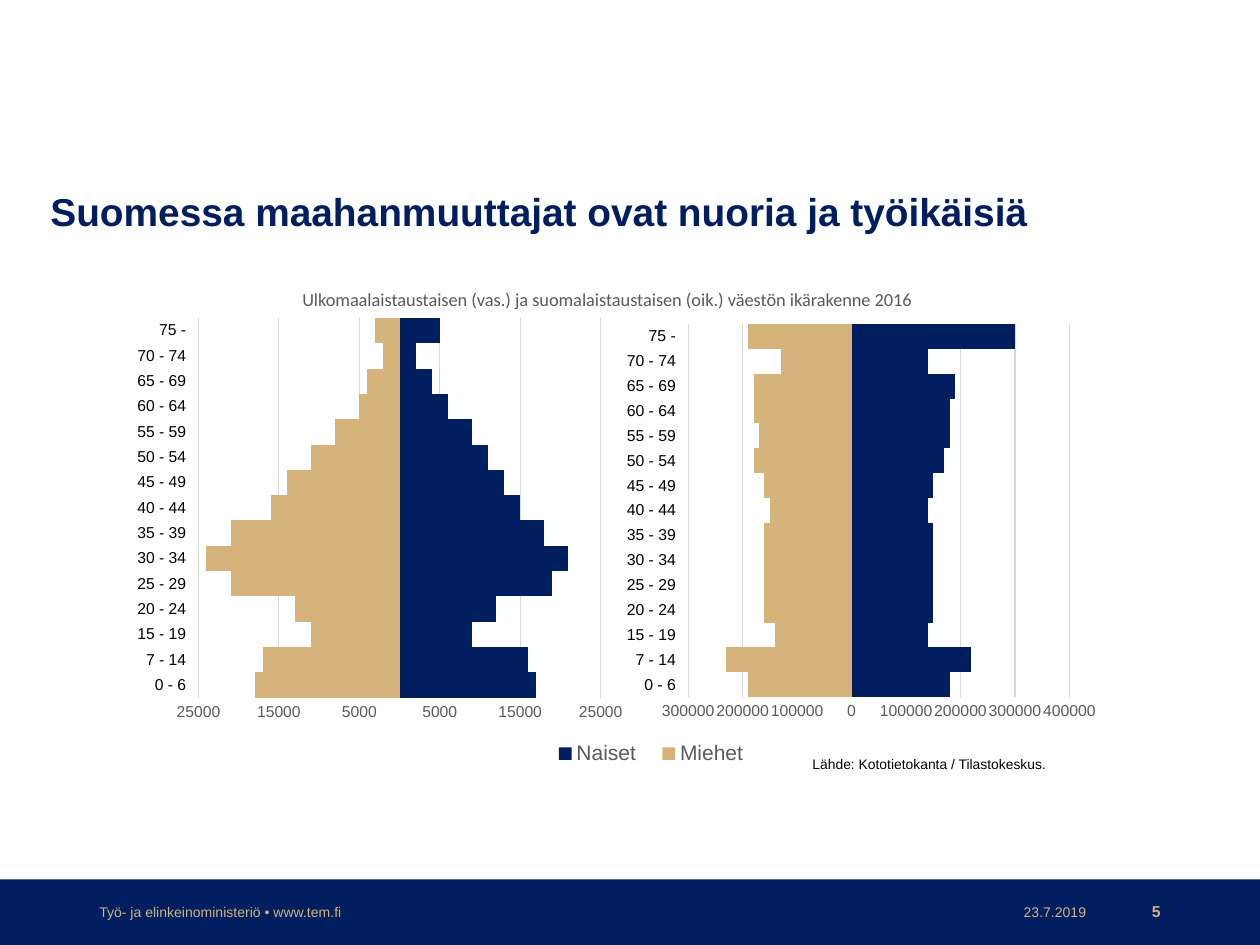
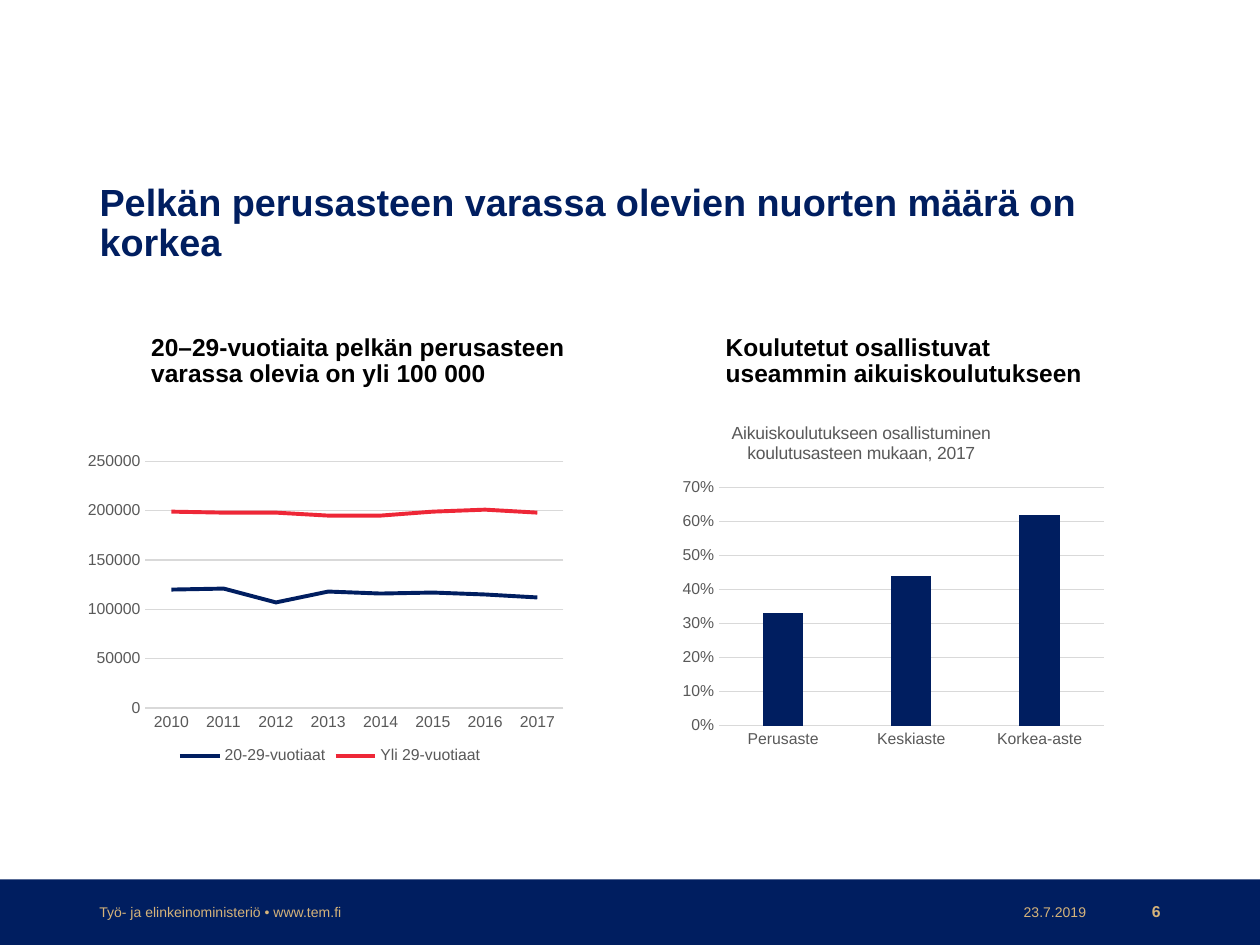
from lxml import etree
from pptx import Presentation
from pptx.chart.data import CategoryChartData as Data
from pptx.dml.color import RGBColor as RGB
from pptx.enum.chart import XL_CHART_TYPE as Kind, XL_LEGEND_POSITION as Side
from pptx.enum.chart import XL_MARKER_STYLE as Mark, XL_TICK_MARK as Tick
from pptx.enum.chart import XL_TICK_LABEL_POSITION as Spot
from pptx.enum.shapes import MSO_SHAPE as Form
from pptx.enum.text import MSO_ANCHOR as Anchor, MSO_AUTO_SIZE as Fit, PP_ALIGN as Align
from pptx.oxml.ns import qn
from pptx.util import Inches, Pt

HUES = {"navy": "001E60", "sand": "D5B37A", "red": "EE2737",
        "black": "000000", "gray": "595959", "grid": "D9D9D9"}
AGES = ["0 - 6", "7 - 14", "15 - 19"] + [f"{a} - {a + 4}" for a in range(20, 75, 5)] + ["75 -"]
YEARS = [str(y) for y in range(2010, 2018)]


def hue(name):
    return RGB.from_string(HUES[name])


def style(font, size, color, bold=False, face="Arial"):
    font.size = Pt(size)
    font.name = face
    font.bold = bold
    font.color.rgb = hue(color)


def put(shape, at):
    shape.left, shape.top, shape.width, shape.height = map(Inches, at)


def write(shape, text, size, color, bold=False, face="Arial",
          align=Align.LEFT, anchor=Anchor.TOP, lead=1.0):
    frame = shape.text_frame
    frame.text = text
    frame.word_wrap = True
    frame.auto_size = Fit.NONE
    frame.vertical_anchor = anchor
    for para in frame.paragraphs:
        para.alignment = align
        para.line_spacing = lead
        para.space_before = Pt(0)
        for run in para.runs:
            style(run.font, size, color, bold, face)


def label(slide, at, text, size, color, **look):
    box = slide.shapes.add_textbox(*map(Inches, at))
    write(box, text, size, color, **look)


def title(slide, at, text, size):
    head = slide.shapes.title
    put(head, at)
    write(head, text, size, "navy", bold=True, anchor=Anchor.MIDDLE, lead=0.9)
    return head


def foot(slide, page):
    mid = {"anchor": Anchor.MIDDLE}
    label(slide, (0.69, 7.12, 3.37, 0.23), "Työ- ja elinkeinoministeriö • www.tem.fi",
          8, "sand", **mid)
    label(slide, (7.95, 7.12, 0.77, 0.23), "23.7.2019", 8, "sand", align=Align.RIGHT, **mid)
    label(slide, (8.72, 7.12, 0.59, 0.23), page, 9, "sand", bold=True, align=Align.RIGHT, **mid)


def band(prs, slide):
    bar = slide.shapes.add_shape(Form.RECTANGLE, 0, Inches(6.98), prs.slide_width, Inches(0.52))
    bar.shadow.inherit = False
    bar.fill.solid()
    bar.fill.fore_color.rgb = hue("navy")
    bar.line.fill.background()
    prs.slide_master.element.cSld.spTree.insert(2, bar.element)


def place(chart, part, at, index, inner=False):
    node = chart.element.xpath(f"c:chart/c:{part}")[0]
    for old in node.findall(qn("c:layout")):
        node.remove(old)
    layout = etree.Element(qn("c:layout"))
    manual = etree.SubElement(layout, qn("c:manualLayout"))
    pairs = [("layoutTarget", "inner")] if inner else []
    pairs += [("xMode", "edge"), ("yMode", "edge")] + list(zip("xywh", at))
    for tag, val in pairs:
        etree.SubElement(manual, qn(f"c:{tag}")).set("val", str(val))
    node.insert(index, layout)


def axes(chart, span, form, color):
    cat, val = chart.category_axis, chart.value_axis
    for axis, tint in ((cat, color), (val, "gray")):
        axis.major_tick_mark = axis.minor_tick_mark = Tick.NONE
        style(axis.tick_labels.font, 9, tint)
    cat.has_major_gridlines = False
    val.has_major_gridlines = True
    for line in (cat.format.line, val.major_gridlines.format.line):
        line.color.rgb = hue("grid")
        line.width = Pt(0.75)
    val.format.line.fill.background()
    val.minimum_scale, val.maximum_scale, val.major_unit = span
    val.tick_labels.number_format = form
    val.tick_labels.number_format_is_linked = False


def graph(slide, kind, at, cats, rows, plot, span, form="General", color="gray"):
    data = Data()
    data.categories = cats
    for name, vals, tint in rows:
        data.add_series(name, vals)
    chart = slide.shapes.add_chart(kind, *map(Inches, at), data).chart
    style(chart.font, 10, "black")
    chart.has_title = chart.has_legend = False
    chart.plots[0].vary_by_categories = False
    axes(chart, span, form, color)
    place(chart, "plotArea", plot, 0, True)
    for ser, (name, vals, tint) in zip(chart.plots[0].series, rows):
        if kind == Kind.LINE:
            ser.smooth = False
            ser.marker.style = Mark.NONE
            ser.format.line.color.rgb = hue(tint)
            ser.format.line.width = Pt(2.25)
        else:
            ser.invert_if_negative = False
            ser.format.fill.solid()
            ser.format.fill.fore_color.rgb = hue(tint)
    return chart


def legend(chart, side, size):
    chart.has_legend = True
    chart.legend.position = side
    chart.legend.include_in_layout = False
    style(chart.legend.font, size, "gray")


def tower(slide, at, names, men, women, plot, span):
    rows = [(name, [v * 1000 for v in vals], tint) for name, vals, tint in
            zip(names, ([-v for v in men], women), ("sand", "navy"))]
    chart = graph(slide, Kind.BAR_CLUSTERED, at, AGES, rows, plot, span, "0;0", "black")
    chart.plots[0].gap_width = 0
    chart.plots[0].overlap = 100
    chart.category_axis.tick_label_position = Spot.LOW
    return chart


def ages(prs):
    slide = prs.slides.add_slide(prs.slide_layouts[5])
    band(prs, slide)
    chart = tower(slide, (1.92, 2.45, 7.38, 4.06), ("Miehet", "Naiset"),
                  [190, 230, 140, 160, 160, 160, 160, 150, 160, 180, 170, 180, 180, 130, 190],
                  [180, 220, 140, 150, 150, 150, 150, 140, 150, 170, 180, 180, 190, 140, 300],
                  (0.48, 0.03, 0.41, 0.73), (-300000, 400000, 100000))
    legend(chart, Side.RIGHT, 12)
    place(chart, "legend", (0.32, 0.83, 0.24, 0.08), 1)
    tower(slide, (1.09, 2.49, 3.87, 3.35), ("Series 1", "Series 2"),
          [18, 17, 11, 13, 21, 24, 21, 16, 14, 11, 8, 5, 4, 2, 3],
          [17, 16, 9, 12, 19, 21, 18, 15, 13, 11, 9, 6, 4, 2, 5],
          (0.12, 0.01, 0.83, 0.9), (-25000, 25000, 10000))
    foot(slide, "5")
    label(slide, (6.35, 5.95, 2.13, 0.23), "Lähde: Kototietokanta / Tilastokeskus.", 7.9, "black")
    head = title(slide, (0.33, 1.4, 8, 0.6),
                 "Suomessa maahanmuuttajat ovat nuoria ja työikäisiä", 22.2)
    head.text_frame.margin_left = head.text_frame.margin_right = Inches(0.07)
    label(slide, (1.91, 2.24, 5.82, 0.28),
          "Ulkomaalaistaustaisen (vas.) ja suomalaistaustaisen (oik.) väestön ikärakenne 2016",
          10.5, "gray", face="Calibri", align=Align.CENTER)


def skills(prs):
    slide = prs.slides.add_slide(prs.slide_layouts[4])
    title(slide, (0.69, 1.37, 7.98, 0.82),
          "Pelkän perusasteen varassa olevien nuorten määrä on korkea", 21.6)
    foot(slide, "6")
    heads = {1: ((1.1, 2.61, 3.79, 0.68),
                 "20–29-vuotiaita pelkän perusasteen\vvarassa olevia on yli 100 000"),
             3: ((5.66, 2.61, 3.35, 0.68),
                 "Koulutetut osallistuvat\vuseammin aikuiskoulutukseen")}
    for hold in list(slide.placeholders):
        idx = hold.placeholder_format.idx
        if idx in heads:
            at, text = heads[idx]
            put(hold, at)
            write(hold, text, 14, "black", bold=True, lead=0.9)
        elif idx:
            hold.element.getparent().remove(hold.element)

    young = [v * 1000 for v in (120, 121, 107, 118, 116, 117, 115, 112)]
    older = [v * 1000 for v in (199, 198, 198, 195, 195, 199, 201, 198)]
    chart = graph(slide, Kind.LINE, (0.69, 3.23, 3.86, 2.88), YEARS,
                  [("20-29-vuotiaat", young, "navy"), ("Yli 29-vuotiaat", older, "red")],
                  (0.12, 0.15, 0.86, 0.68), (0, 250000, 50000))
    legend(chart, Side.BOTTOM, 9)

    chart = graph(slide, Kind.COLUMN_CLUSTERED, (5.36, 3.23, 3.47, 2.78),
                  ["Perusaste", "Keskiaste", "Korkea-aste"],
                  [("Series 1", (0.33, 0.44, 0.62), "navy")],
                  (0.1, 0.23, 0.88, 0.68), (0, 0.7, 0.1), "0%")
    chart.plots[0].gap_width = 219
    chart.plots[0].overlap = -27
    frame = chart.chart_title.text_frame
    frame.text = "Aikuiskoulutukseen osallistuminen\nkoulutusasteen mukaan, 2017"
    for para in frame.paragraphs:
        para.alignment = Align.CENTER
        style(para.font, 10, "gray")
        for run in para.runs:
            style(run.font, 10, "gray")
    place(chart, "title", (0.12, 0.03), 1)


def main():
    prs = Presentation()
    prs.slide_width, prs.slide_height = Inches(10), Inches(7.5)
    ages(prs)
    skills(prs)
    prs.save("out.pptx")


if __name__ == "__main__":
    main()
